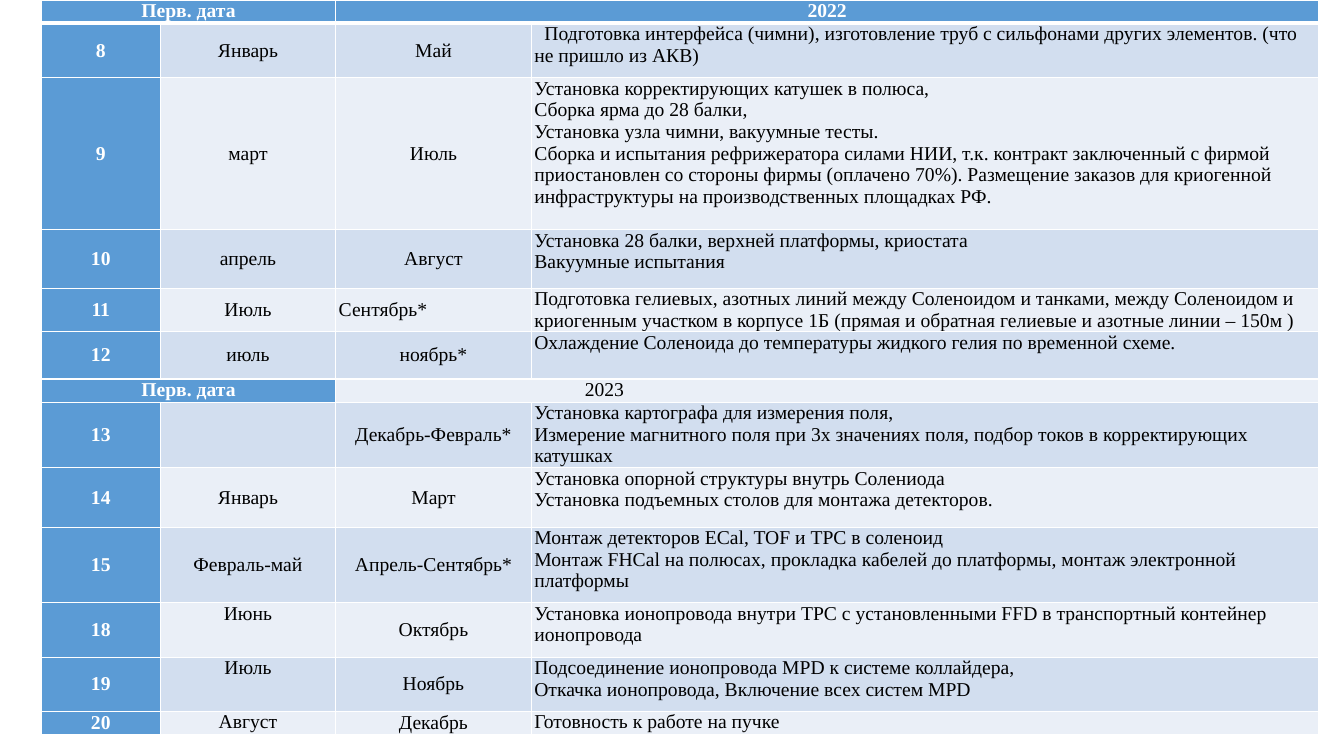
from dataclasses import dataclass

from lxml import etree
from pptx import Presentation
from pptx.dml.color import RGBColor
from pptx.enum.text import MSO_ANCHOR, PP_ALIGN
from pptx.oxml.ns import qn
from pptx.table import Table, _Cell
from pptx.util import Inches, Pt

TOP, MIDDLE = MSO_ANCHOR.TOP, MSO_ANCHOR.MIDDLE
LEFT, CENTER = PP_ALIGN.LEFT, PP_ALIGN.CENTER
FONT = "Times New Roman"
COLORS = {
    "heading": "5B9BD5",
    "odd": "D2DEEF",
    "even": "EAEFF7",
    "light": "FFFFFF",
    "dark": "000000",
}
COLUMN_WIDTHS = (1.18, 1.74, 1.94, 7.81)


@dataclass(frozen=True)
class YearHeading:
    height: float
    year: str
    is_first: bool = False


@dataclass(frozen=True)
class Stage:
    height: float
    number: str
    planned: str
    actual: str
    tasks: tuple[str, ...]
    planned_anchor: MSO_ANCHOR = MIDDLE
    actual_align: PP_ALIGN = CENTER
    first_line: float = 0


SCHEDULE = (
    YearHeading(0.23, "2022", is_first=True),
    Stage(0.54, "8", "Январь", "Май", (
        "Подготовка интерфейса (чимни), изготовление труб с сильфонами "
        "других элементов. (что не пришло из АКВ)",
    ), first_line=0.1),
    Stage(1.51, "9", "март", "Июль", (
        "Установка корректирующих катушек в полюса,",
        "Сборка ярма до 28 балки,",
        "Установка узла чимни, вакуумные тесты.",
        "Сборка и испытания рефрижератора силами НИИ, т.к. контракт "
        "заключенный с фирмой приостановлен со стороны фирмы (оплачено 70%). "
        "Размещение заказов для криогенной инфраструктуры на "
        "производственных площадках РФ.",
    )),
    Stage(0.58, "10", "апрель", "Август", (
        "Установка 28 балки, верхней платформы, криостата",
        "Вакуумные испытания",
    )),
    Stage(0.43, "11", "Июль", "Сентябрь*", (
        "Подготовка гелиевых, азотных линий между Соленоидом и танками, "
        "между Соленоидом и криогенным участком в корпусе 1Б (прямая и "
        "обратная гелиевые и азотные линии – 150м )",
    ), actual_align=LEFT),
    Stage(0.47, "12", "июль", "ноябрь*", (
        "Охлаждение Соленоида до температуры жидкого гелия по временной схеме.",
    )),
    YearHeading(0.23, "2023"),
    Stage(0.65, "13", "", "Декабрь-Февраль*", (
        "Установка картографа для измерения поля,",
        "Измерение магнитного поля при 3x значениях поля, подбор токов "
        "в корректирующих катушках",
    )),
    Stage(0.59, "14", "Январь", "Март", (
        "Установка опорной структуры внутрь Солениода",
        "Установка подъемных столов для монтажа детекторов.",
    )),
    Stage(0.75, "15", "Февраль-май", "Апрель-Сентябрь*", (
        "Монтаж детекторов ЕCal, TOF и TPC в соленоид",
        "Монтаж FHCal на полюсах, прокладка кабелей до платформы, "
        "монтаж электронной платформы",
    )),
    Stage(0.54, "18", "Июнь", "Октябрь", (
        "Установка ионопровода внутри TPC c установленными FFD "
        "в транспортный контейнер ионопровода",
    ), planned_anchor=TOP),
    Stage(0.54, "19", "Июль", "Ноябрь", (
        "Подсоединение ионопровода MPD к системе коллайдера,",
        "Откачка ионопровода, Включение всех систем MPD",
    ), planned_anchor=TOP),
    Stage(0.23, "20", "Август", "Декабрь", (
        "Готовность к работе на пучке",
    ), planned_anchor=TOP),
)


def write_text(cell: _Cell, *lines: str, color: str = "dark", bold: bool = False,
               align: PP_ALIGN = CENTER, anchor: MSO_ANCHOR = MIDDLE,
               margin: float = 0, first_line: float = 0) -> None:
    cell.vertical_anchor = anchor
    cell.margin_left = cell.margin_right = Inches(0.03)
    cell.margin_top = cell.margin_bottom = 0
    frame = cell.text_frame
    frame.text = "\n".join(lines)
    for paragraph in frame.paragraphs:
        paragraph.alignment = align
        font = paragraph.font
        font.name, font.size, font.bold = FONT, Pt(14), bold
        font.color.rgb = RGBColor.from_string(COLORS[color])
        for run in paragraph.runs:
            run.font.name, run.font.size, run.font.bold = FONT, Pt(14), bold
            run.font.color.rgb = RGBColor.from_string(COLORS[color])
        properties = paragraph._p.get_or_add_pPr()
        properties.set("marL", str(Inches(margin)))
        properties.set("indent", str(Inches(first_line)))


def paint_cell(cell: _Cell, fill: str, is_first_row: bool) -> None:
    cell.fill.solid()
    cell.fill.fore_color.rgb = RGBColor.from_string(COLORS[fill])
    widths = {"lnL": 1, "lnR": 1, "lnB": 1}
    if is_first_row:
        widths = {"lnL": 1, "lnR": 1, "lnT": 1, "lnB": 3}
    properties = cell._tc.get_or_add_tcPr()
    for position, (side, width) in enumerate(widths.items()):
        border = etree.Element(qn(f"a:{side}"), w=str(Pt(width)))
        line_fill = etree.SubElement(border, qn("a:solidFill"))
        etree.SubElement(line_fill, qn("a:srgbClr"), val=COLORS["light"])
        properties.insert(position, border)


def fill_year(table: Table, row: int, heading: YearHeading) -> None:
    date_label, year = table.cell(row, 0), table.cell(row, 2)
    date_label.merge(table.cell(row, 1))
    year.merge(table.cell(row, 3))
    write_text(date_label, "Перв. дата", color="light", bold=True, anchor=TOP)
    if heading.is_first:
        write_text(year, heading.year, color="light", bold=True, anchor=TOP)
    else:
        write_text(year, heading.year, align=LEFT, anchor=TOP, margin=2.44)


def fill_stage(table: Table, row: int, stage: Stage) -> None:
    number, planned, actual, tasks = table.rows[row].cells
    write_text(number, stage.number, color="light", bold=True)
    write_text(planned, stage.planned, anchor=stage.planned_anchor)
    write_text(actual, stage.actual, align=stage.actual_align)
    write_text(tasks, *stage.tasks, align=LEFT, anchor=TOP,
               first_line=stage.first_line)


def main() -> None:
    presentation = Presentation()
    presentation.slide_width = Inches(13.33)
    presentation.slide_height = Inches(7.5)
    slide = presentation.slides.add_slide(presentation.slide_layouts[6])
    total_height = sum(entry.height for entry in SCHEDULE)
    table = slide.shapes.add_table(
        len(SCHEDULE), len(COLUMN_WIDTHS), Inches(0.41), 0,
        Inches(sum(COLUMN_WIDTHS)), Inches(total_height)).table
    for column, width in zip(table.columns, COLUMN_WIDTHS):
        column.width = Inches(width)
    for row, entry in enumerate(SCHEDULE):
        table.rows[row].height = Inches(entry.height)
        if isinstance(entry, YearHeading):
            fill_year(table, row, entry)
            heading_columns = 4 if entry.is_first else 2
        else:
            fill_stage(table, row, entry)
            heading_columns = 1
        band = "odd" if row % 2 else "even"
        for column, cell in enumerate(table.rows[row].cells):
            fill = "heading" if column < heading_columns else band
            paint_cell(cell, fill, row == 0)
    presentation.save("out.pptx")


if __name__ == "__main__":
    main()
